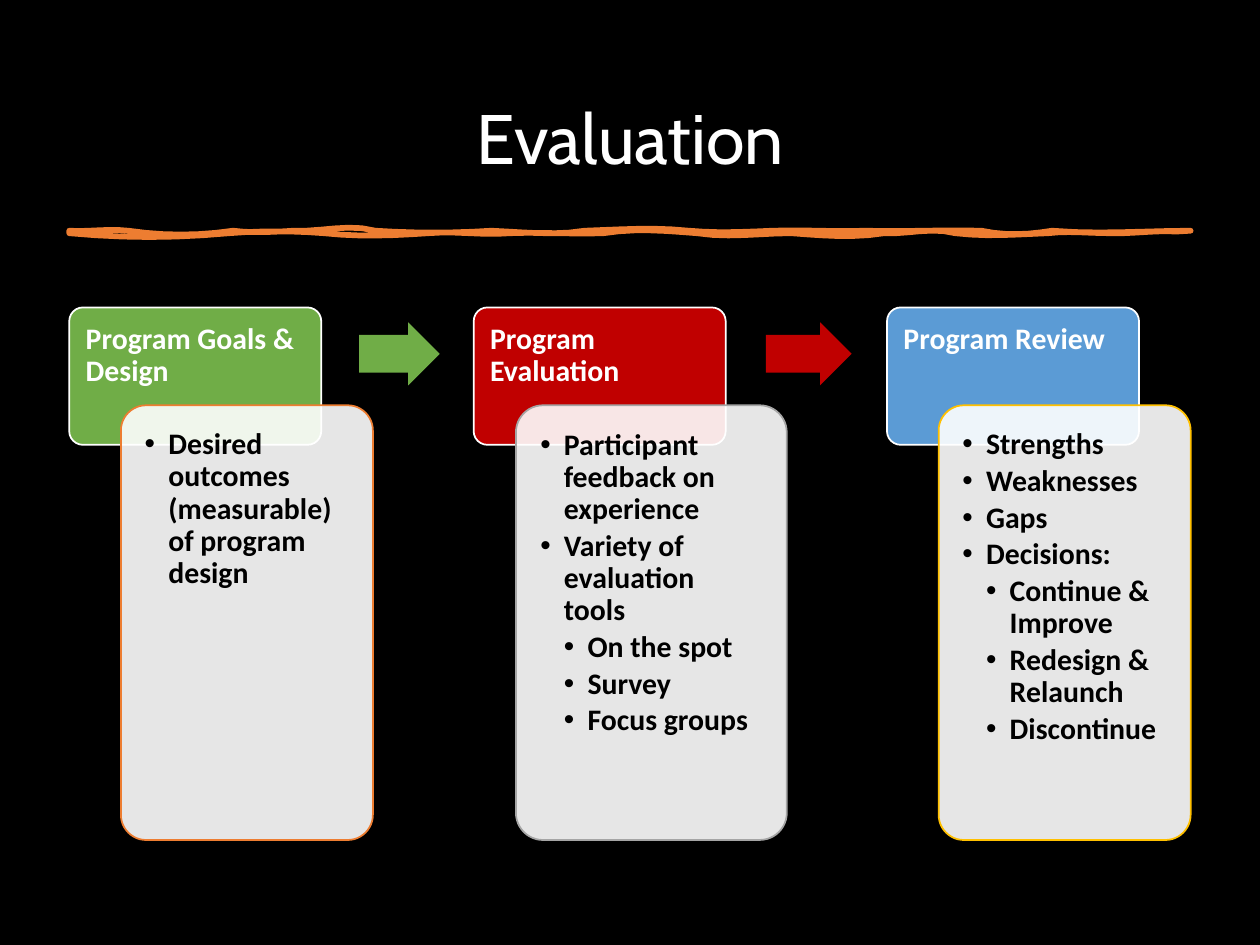
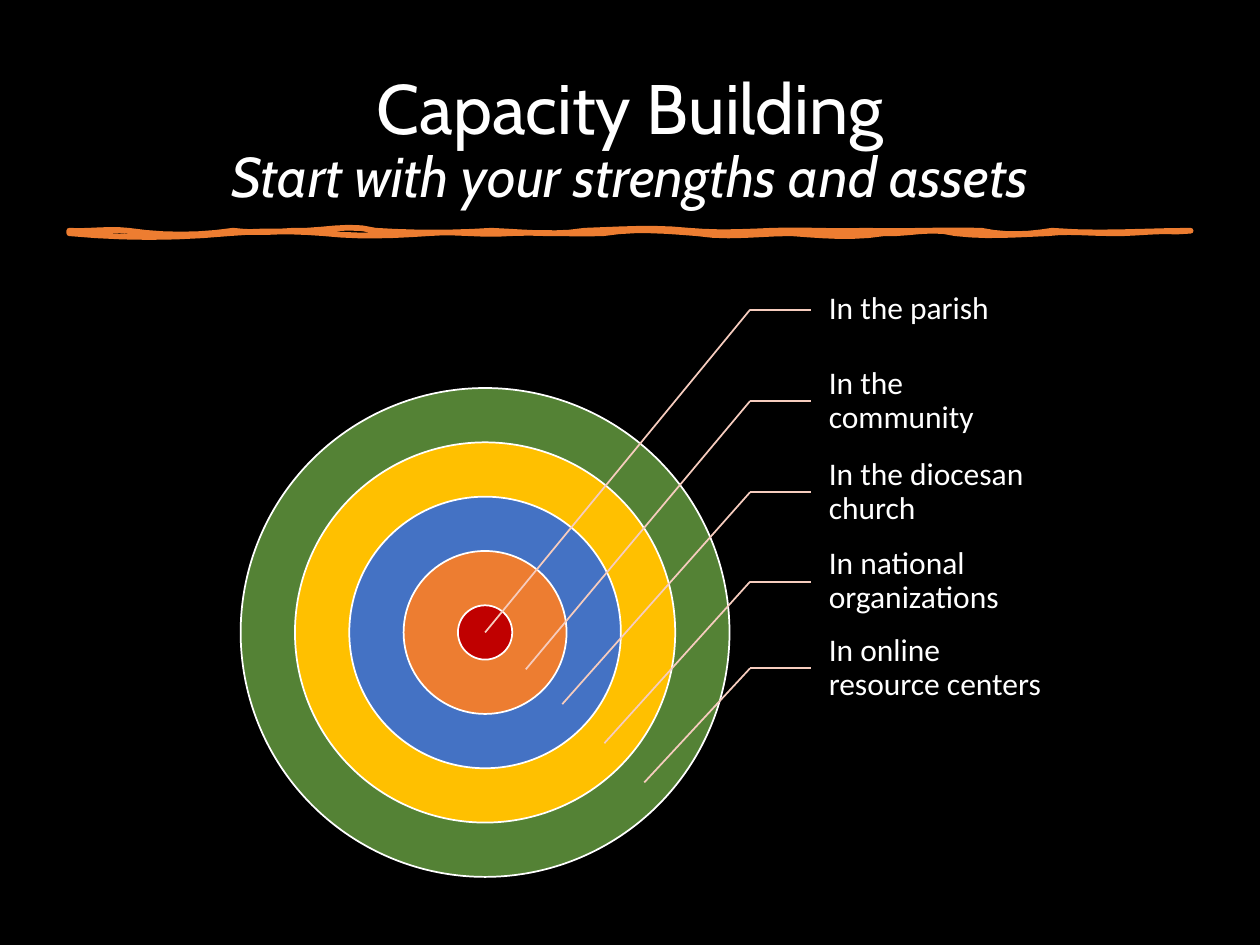
from pptx import Presentation
from pptx import util as u
from pptx.dml.color import RGBColor
from pptx.enum import shapes, text
from pptx.oxml.ns import qn
from lxml import etree

WHITE, BLACK, ORANGE, RED, GOLD = "FFFFFF", "000000", "ED7D31", "C00000", "FFC000"
GREEN, BLUE, GREY, PINK = "70AD47", "5B9BD5", "A5A5A5", "F6CCBE"

TOP = [(73.4, .7, -1.4), (133.2, 2.9, 2.9), (167.8, 1.4, .7), (214.6, .7, -4.3),
       (280.8, 1.4, 1.4), (334.1, .7, 2.9), (393.8, -.7, -2.2), (441.4, 1.4, .7),
       (494.6, -.7, .7), (560.9, .7, -.7), (601.2, 2.9, 2.2), (680.4, 2.2, 0)]
LOW = [(633.6, -2.9, .7), (599, 0, -1.4), (545.8, .7, 2.2), (505.4, -3.6, .7),
       (452.2, 2.9, 1.4), (398.2, 0, 2.9), (344.9, -1.4, -2.9), (291.6, .7, -.7),
       (244.8, 1.4, -1.4), (185, 1.4, 2.2), (131, -1.4, -1.4), (39.6, 2.9, 2.9)]


def tint(code):
    return RGBColor.from_string(code)


def paint(fill, code):
    fill.solid()
    fill.fore_color.rgb = tint(code)


def write(para, words, font="Calibri", size=17, color=WHITE, bold=False, ital=False,
          align=text.PP_ALIGN.LEFT, after=0, level=0):
    para.alignment = align
    para.line_spacing = 0.9
    para.space_after = u.Pt(after)
    run = para.add_run()
    run.text = words
    face = run.font
    face.name, face.size, face.bold, face.italic = font, u.Pt(size), bold, ital
    face.color.rgb = tint(color)
    if level:
        props = para._p.get_or_add_pPr()
        props.set("marL", str(u.Pt(13.5 * level)))
        props.set("indent", str(-u.Pt(13.5)))
        etree.SubElement(props, qn("a:buFont")).set("typeface", "Arial")
        etree.SubElement(props, qn("a:buChar")).set("char", "•")


def wave(start, y, bends, steps=6):
    x = start
    for end, a, b in bends:
        for i in range(1, steps + 1):
            t = i / steps
            rise = 3 * t * (1 - t) * ((1 - t) * a + t * b)
            yield u.Pt(x + (end - x) * t), u.Pt(y + rise)
        x = end


class Deck:
    def __init__(self):
        self.file = Presentation()
        self.file.slide_width, self.file.slide_height = u.Pt(720), u.Pt(540)
        paint(self.file.slide_master.background.fill, BLACK)
        self.slide = None

    def page(self, title, sub=None):
        self.slide = self.file.slides.add_slide(self.file.slide_layouts[5])
        head = self.slide.shapes.title
        head.left, head.top, head.width, head.height = map(u.Pt, (49.5, 28.8, 621, 104.4))
        frame = self.frame(head, (7.2, 3.6, 7.2, 3.6), text.MSO_ANCHOR.MIDDLE)
        look = dict(font="Cabin", align=text.PP_ALIGN.CENTER)
        write(frame.paragraphs[0], title, size=40, **look)
        if sub:
            write(frame.add_paragraph(), sub, size=32, ital=True, **look)
        self.stroke()

    def stroke(self):
        form = self.slide.shapes.build_freeform(u.Pt(39.6), u.Pt(131.9))
        form.add_line_segments([*wave(39.6, 131.9, TOP), *wave(680.4, 133.3, LOW)])
        band = form.convert_to_shape()
        band.shadow.inherit = False
        band.fill.background()
        self.edge(band, ORANGE, 3.25)

    def edge(self, item, color, width=1):
        item.line.color.rgb = tint(color)
        item.line.width = u.Pt(width)

    def frame(self, item, inset, anchor=text.MSO_ANCHOR.TOP):
        frame = item.text_frame
        frame.word_wrap = True
        frame.auto_size = text.MSO_AUTO_SIZE.NONE
        frame.vertical_anchor = anchor
        (frame.margin_left, frame.margin_top,
         frame.margin_right, frame.margin_bottom) = map(u.Pt, inset)
        return frame

    def shape(self, kind, x, y, w, h, fill, line=None, adjust=(), alpha=None):
        item = self.slide.shapes.add_shape(kind, *map(u.Pt, (x, y, w, h)))
        item.shadow.inherit = False
        paint(item.fill, fill)
        for i, value in enumerate(adjust):
            item.adjustments[i] = value
        if line:
            self.edge(item, line)
        else:
            item.line.fill.background()
        if alpha:
            tone = item._element.spPr.find(qn("a:solidFill"))[0]
            etree.SubElement(tone, qn("a:alpha")).set("val", str(alpha * 1000))
        return item

    def card(self, x, y, w, h, fill, line, rows, inset, alpha=None, **look):
        box = self.shape(shapes.MSO_SHAPE.ROUNDED_RECTANGLE, x, y, w, h, fill, line, [0.1], alpha)
        frame = self.frame(box, inset)
        for i, (level, words) in enumerate(rows):
            para = frame.add_paragraph() if i else frame.paragraphs[0]
            write(para, words, level=level, bold=True, **look)

    def label(self, x, y, w, h, words):
        box = self.slide.shapes.add_textbox(*map(u.Pt, (x, y, w, h)))
        frame = self.frame(box, (10, 2.2, 2.2, 2.2), text.MSO_ANCHOR.MIDDLE)
        write(frame.paragraphs[0], words, size=18)
        return box

    def line(self, x, y, to_x, to_y, goal=None):
        wire = self.slide.shapes.add_connector(
            shapes.MSO_CONNECTOR.STRAIGHT, *map(u.Pt, (x, y, to_x, to_y)))
        self.edge(wire, PINK)
        etree.SubElement(wire._element.spPr, qn("a:effectLst"))
        if goal is not None:
            wire.end_connect(goal, 1)


def review(deck):
    deck.page("Evaluation")
    stages = [
        (39.6, 144, GREEN, ORANGE, "Program Goals & Design",
         [(1, "Desired outcomes (measurable) of program design")]),
        (270.7, 154.8, RED, GREY, "Program Evaluation",
         [(1, "Participant feedback on experience"), (1, "Variety of evaluation tools"),
          (2, "On the spot"), (2, "Survey"), (2, "Focus groups")]),
        (506.9, 144, BLUE, GOLD, "Program Review",
         [(1, "Strengths"), (1, "Weaknesses"), (1, "Gaps"), (1, "Decisions:"),
          (2, "Continue & Improve"), (2, "Redesign & Relaunch"), (2, "Discontinue")])]
    arrows = [(205.2, 46.1), (437.6, 49)]
    for i, (x, wide, fill, line, head, rows) in enumerate(stages):
        deck.card(x, 175.7, 144, 78.5, fill, WHITE, [(0, head)], (7.1, 7.1, 7.1, 5))
        deck.card(x + 101.5 - wide / 2, 231.6, wide, 248.4, WHITE, line, rows,
                  (9.4,) * 4, alpha=90, color=BLACK, after=2.6)
        if i < len(arrows):
            left, span = arrows[i]
            deck.shape(shapes.MSO_SHAPE.RIGHT_ARROW, left, 184.2, span, 36, fill,
                       adjust=(0.6, 0.5))


def build(deck):
    deck.page("Capacity Building", "Start with your strengths and assets")
    mid_x, mid_y, step = 277.2, 361.4, 15.52
    for i, fill in enumerate(["548235", GOLD, "4472C4", ORANGE, RED]):
        r = step * (9 - 2 * i)
        deck.shape(shapes.MSO_SHAPE.OVAL, mid_x - r, mid_y - r, 2 * r, 2 * r, fill, WHITE)
    places = [("In the parish", 177, mid_x, mid_y),
              ("In the community", 229.2, 300.5, 382.5),
              ("In the diocesan church", 281.3, 321.3, 402.4),
              ("In national organizations", 332.4, 345.4, 424.7),
              ("In online resource centers", 381.9, 368.2, 447.1)]
    for words, y, x, tip in places:
        box = deck.label(463.6, y - 25, 139.7, 50, words)
        deck.line(428.6, y, 463.6, y, box)
        deck.line(428.6, y, x, tip)


def main():
    deck = Deck()
    review(deck)
    build(deck)
    deck.file.save("out.pptx")


if __name__ == "__main__":
    main()
